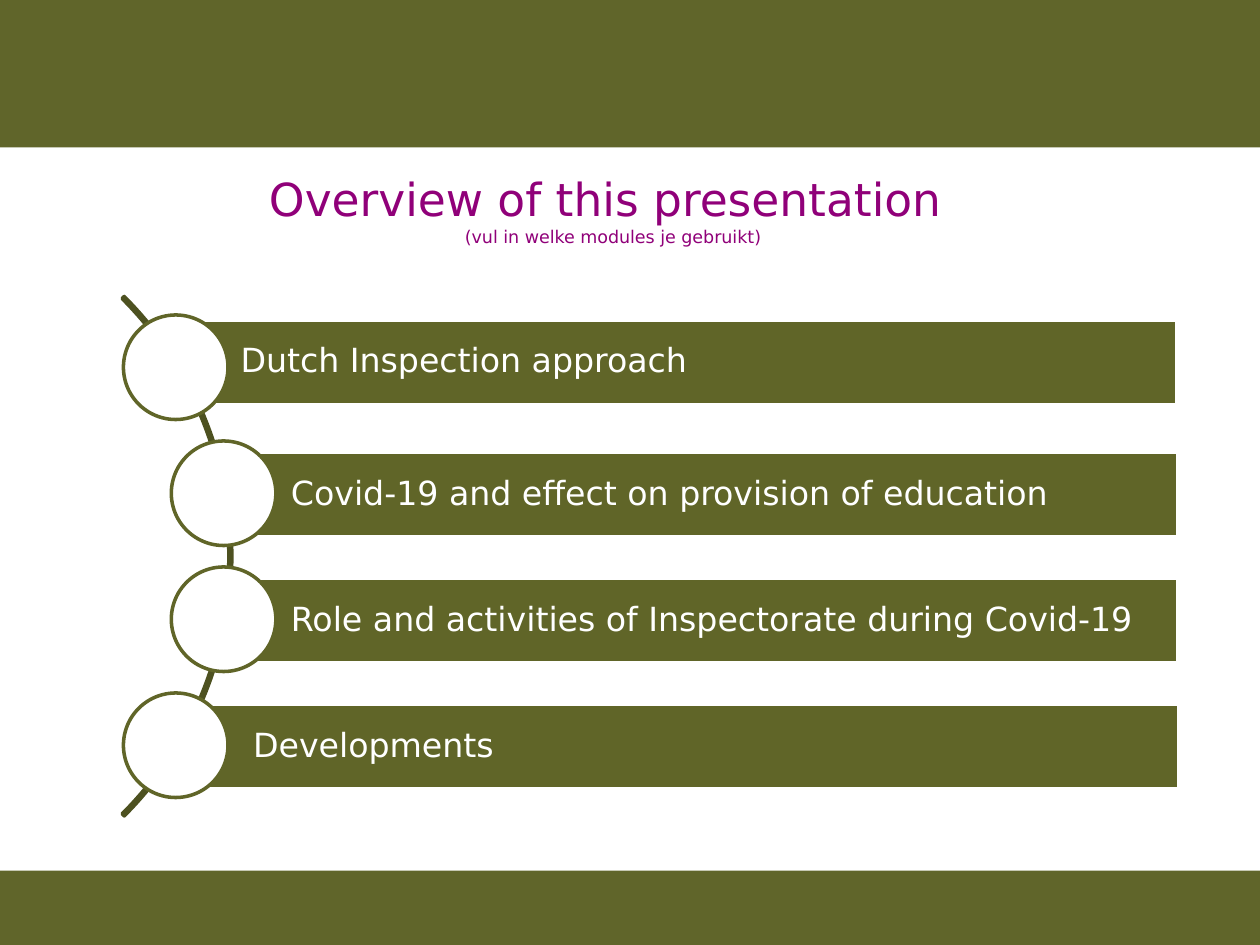
import dataclasses

import pptx
import pptx.dml.color
import pptx.enum.shapes
import pptx.enum.text
import pptx.oxml.ns
import pptx.util
from lxml import etree

Inches = pptx.util.Inches
Pt = pptx.util.Pt
Kind = pptx.enum.shapes.MSO_SHAPE
Align = pptx.enum.text.PP_ALIGN
Anchor = pptx.enum.text.MSO_ANCHOR

FONT = "DejaVu Sans"
BAND = "60652A"
OLIVE = "606528"
DARK = "4D5120"
WHITE = "FFFFFF"
PLUM = "900079"

FIRST = 2.5
STEP = 1.0
DOT = 0.83
HIGH = 0.67


@dataclasses.dataclass
class Item:
    text: str
    dot: float
    left: float
    width: float
    drop: float = 0.09
    inset: float = 0.53


ITEMS = [
    Item("Dutch Inspection approach", 0.98, 1.38, 7.96, drop=0.04),
    Item("Covid-19 and effect on provision of education", 1.36, 1.78, 7.57),
    Item("Role and activities of Inspectorate during Covid-19", 1.36, 1.78, 7.57),
    Item("Developments", 0.98, 1.4, 7.96, inset=0.61),
]


def color(code: str) -> pptx.dml.color.RGBColor:
    return pptx.dml.color.RGBColor.from_string(code)


def add_shape(slide, kind, left: float, top: float, width: float, height: float,
              fill: str = "", line: str = ""):
    shape = slide.shapes.add_shape(
        kind, Inches(left), Inches(top), Inches(width), Inches(height))
    shape.shadow.inherit = False
    if fill:
        shape.fill.solid()
        shape.fill.fore_color.rgb = color(fill)
    else:
        shape.fill.background()
    if line:
        shape.line.color.rgb = color(line)
        shape.line.width = Pt(2)
    else:
        shape.line.fill.background()
    return shape


def add_run(para, text: str, size: int, code: str) -> None:
    run = para.add_run()
    run.text = text
    run.font.name = FONT
    run.font.size = Pt(size)
    run.font.color.rgb = color(code)


def set_frame(frame, left: float, side: float) -> None:
    frame.word_wrap = True
    frame.auto_size = pptx.enum.text.MSO_AUTO_SIZE.NONE
    frame.vertical_anchor = Anchor.MIDDLE
    frame.margin_left = Inches(left)
    frame.margin_top = frame.margin_right = frame.margin_bottom = Inches(side)


def add_title(slide) -> None:
    title = slide.shapes.title
    title.left, title.top = Inches(0.4), Inches(1.35)
    title.width, title.height = Inches(8.93), Inches(0.62)
    set_frame(title.text_frame, 0, 0)
    para = title.text_frame.paragraphs[0]
    para.alignment = Align.CENTER
    add_run(para, "Overview of this presentation ", 26, PLUM)
    para.add_line_break()
    gap = para._p.find(pptx.oxml.ns.qn("a:br"))
    etree.SubElement(gap, pptx.oxml.ns.qn("a:rPr"), sz="2600")
    add_run(para, "(vul in welke modules je gebruikt)", 10, PLUM)


def add_item(slide, item: Item, top: float) -> None:
    bar = add_shape(slide, Kind.RECTANGLE, item.left, top + item.drop,
                    item.width, HIGH, OLIVE, WHITE)
    set_frame(bar.text_frame, item.inset, 0.05)
    para = bar.text_frame.paragraphs[0]
    para.alignment = Align.LEFT
    para.line_spacing = 0.9
    para.space_after = Pt(7)
    add_run(para, item.text, 19, WHITE)
    add_shape(slide, Kind.OVAL, item.dot, top, DOT, DOT, WHITE, OLIVE)


def main() -> None:
    deck = pptx.Presentation()
    deck.slide_width, deck.slide_height = Inches(10), Inches(7.5)
    slide = deck.slides.add_slide(deck.slide_layouts[5])
    for top, height in ((0, 1.17), (6.91, 0.59)):
        add_shape(slide, Kind.RECTANGLE, 0, top, 10, height, BAND)
    add_title(slide)
    arc = add_shape(slide, Kind.BLOCK_ARC, -3.99, 1.5, 5.83, 5.83, line=DARK)
    for index, value in enumerate((189, 27, 0.004)):
        arc.adjustments[index] = value
    for row, item in enumerate(ITEMS):
        add_item(slide, item, FIRST + row * STEP)
    deck.save("out.pptx")


if __name__ == "__main__":
    main()
